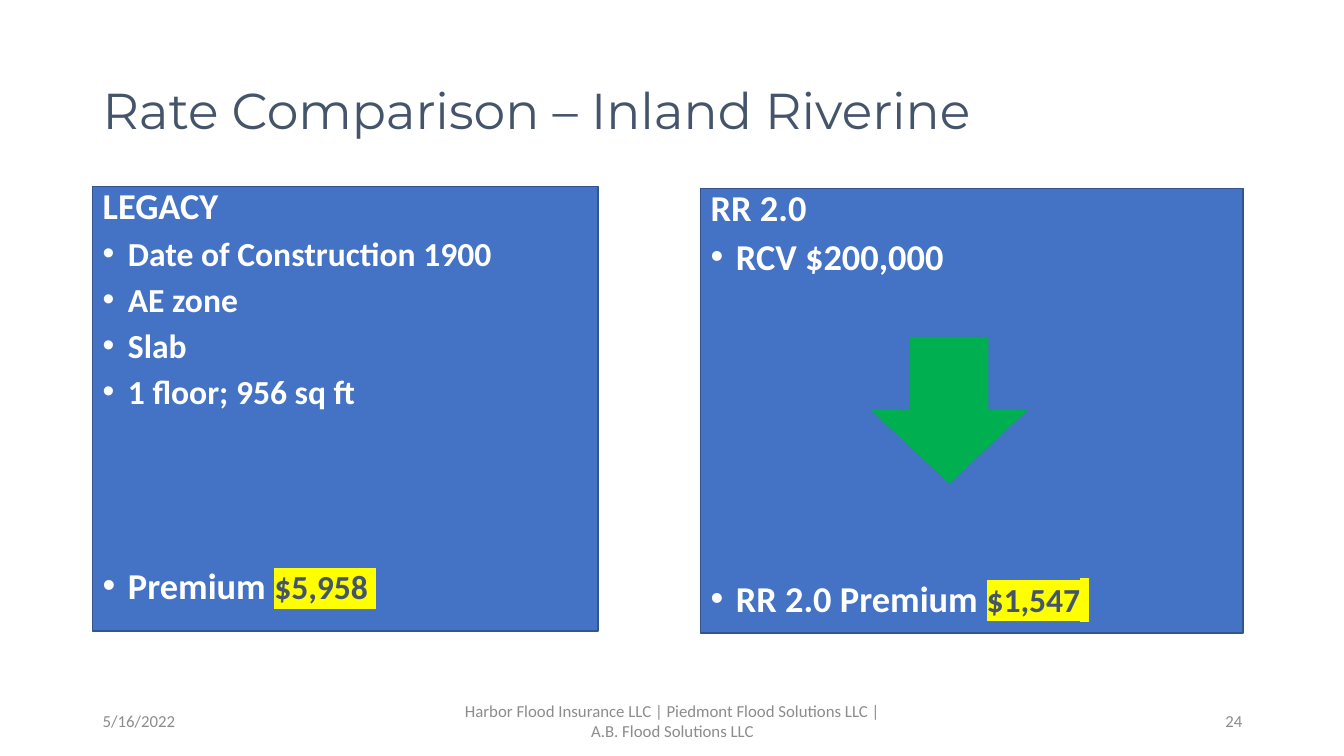
from lxml import etree
from pptx import Presentation
from pptx.dml.color import RGBColor
from pptx.enum.shapes import MSO_SHAPE
from pptx.enum.text import MSO_ANCHOR, PP_ALIGN
from pptx.oxml.ns import qn
from pptx.util import Inches, Pt

RECT, DOWN_ARROW = MSO_SHAPE.RECTANGLE, MSO_SHAPE.DOWN_ARROW
TOP, MIDDLE = MSO_ANCHOR.TOP, MSO_ANCHOR.MIDDLE
LEFT, CENTER, RIGHT = PP_ALIGN.LEFT, PP_ALIGN.CENTER, PP_ALIGN.RIGHT
COLORS = {"slate": "44546A", "blue": "4472C4", "border": "325491", "white": "FFFFFF",
          "gray": "8C8C8C", "green": "00B050", "yellow": "FFFF00"}
GAP = 10
EMPTY_LINE = 34.9


class SlideBuilder:
    font = "Calibri"

    def __init__(self, prs):
        self.slide = prs.slides.add_slide(prs.slide_layouts[6])

    def color(self, name):
        return RGBColor.from_string(COLORS[name])

    def style(self, r, size, color, bold=False, font=None):
        r.font.name = font or self.font
        r.font.size = Pt(size)
        r.font.bold = bold
        r.font.color.rgb = self.color(color)

    def highlight(self, r):
        mark = etree.Element(qn("a:highlight"))
        etree.SubElement(mark, qn("a:srgbClr"), val=COLORS["yellow"])
        r.font.fill._xPr.find(qn("a:solidFill")).addnext(mark)

    def bullet(self, p):
        pPr = p._p.get_or_add_pPr()
        pPr.set("marL", str(Inches(0.25)))
        pPr.set("indent", str(Inches(-0.25)))
        etree.SubElement(pPr, qn("a:buFont"), typeface="Arial")
        etree.SubElement(pPr, qn("a:buChar"), char="•")

    def text(self, box, text, size, color, align=LEFT, font=None, spacing=None):
        tf = self.slide.shapes.add_textbox(*map(Inches, box)).text_frame
        tf.word_wrap = True
        tf.vertical_anchor = MIDDLE
        tf.text = text
        p = tf.paragraphs[0]
        p.alignment = align
        p.line_spacing = spacing
        self.style(p.runs[0], size, color, font=font)

    def shape(self, kind, box, fill, line):
        sp = self.slide.shapes.add_shape(kind, *map(Inches, box))
        sp.shadow.inherit = False
        sp.fill.solid()
        sp.fill.fore_color.rgb = self.color(fill)
        sp.line.color.rgb = self.color(line)
        sp.line.width = Pt(1)
        return sp

    def panel(self, box, heading, facts, fact_size, label, premium, empty_lines):
        tf = self.shape(RECT, box, "blue", "border").text_frame
        tf.word_wrap = True
        tf.vertical_anchor = TOP
        rows = [(heading, 26)] + [(fact, fact_size) for fact in facts] + [(label, 26)]
        for i, (text, size) in enumerate(rows):
            p = tf.add_paragraph() if i else tf.paragraphs[0]
            p.text = text
            p.alignment = LEFT
            p.line_spacing = 0.8
            if i:
                p.space_before = Pt(GAP)
                self.bullet(p)
            self.style(p.runs[0], size, "white", bold=True)
        p.space_before = Pt(GAP + empty_lines * EMPTY_LINE)
        for text, size in premium:
            r = p.add_run()
            r.text = text
            self.style(r, size, "slate", bold=True)
            self.highlight(r)


def main():
    prs = Presentation()
    prs.slide_width, prs.slide_height = Inches(13.33), Inches(7.5)
    s = SlideBuilder(prs)
    s.text((0.92, 0.4, 11.5, 1.45), "Rate Comparison – Inland Riverine", 36, "slate",
           font="Montserrat", spacing=0.9)
    s.panel((0.92, 1.85, 5.01, 4.41), "LEGACY",
            ["Date of Construction 1900", "AE zone", "Slab", "1 floor; 956 sq ft"], 24,
            "Premium ", [("$5,958 ", 24)], 3)
    s.panel((6.95, 1.87, 5.38, 4.41), "RR 2.0", ["RCV $200,000"], 26,
            "RR 2.0 Premium ", [("$1,547", 24), (" ", 26)], 6)
    footer = "Harbor Flood Insurance LLC | Piedmont Flood Solutions LLC | A.B. Flood Solutions LLC"
    for left, width, text, align in [(4.42, 4.5, footer, CENTER),
                                     (0.92, 3, "5/16/2022", LEFT),
                                     (9.42, 3, "24", RIGHT)]:
        s.text((left, 6.95, width, 0.4), text, 12, "gray", align)
    s.shape(DOWN_ARROW, (8.65, 3.35, 1.53, 1.44), "green", "green")
    prs.save("out.pptx")


if __name__ == "__main__":
    main()
